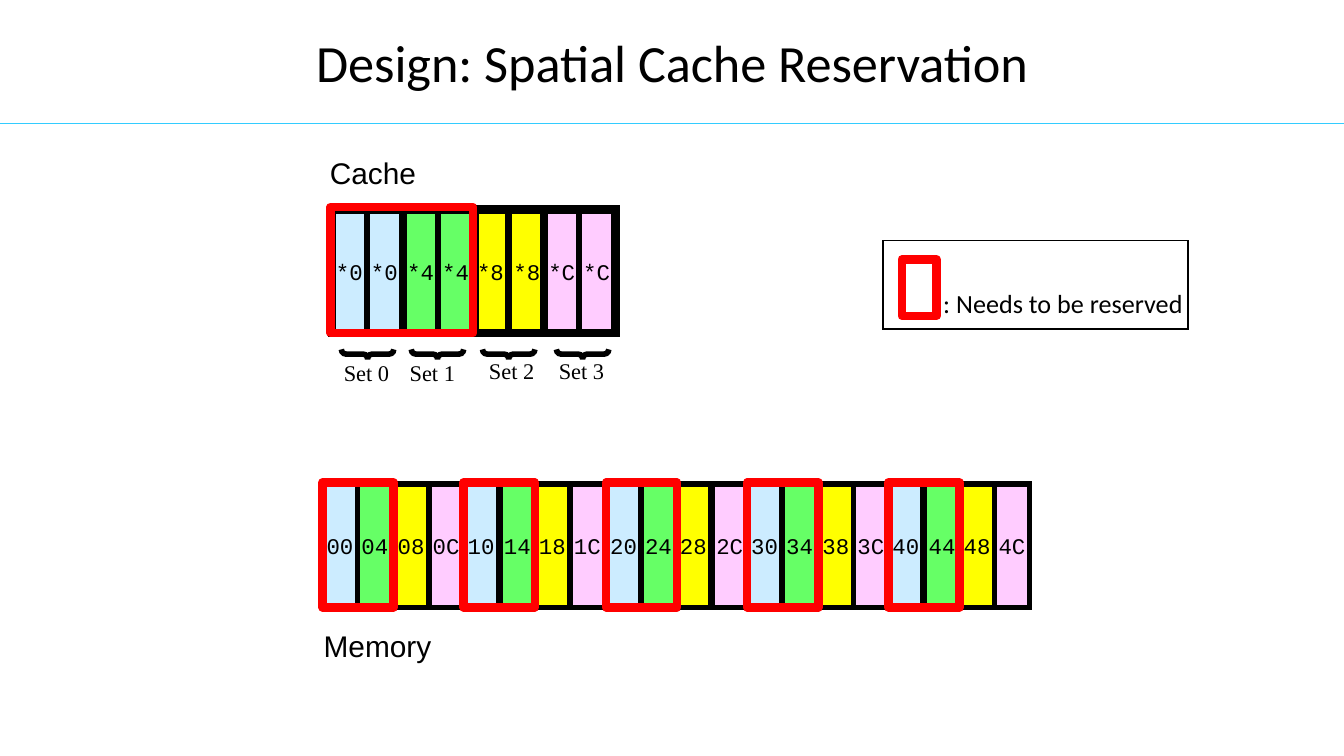
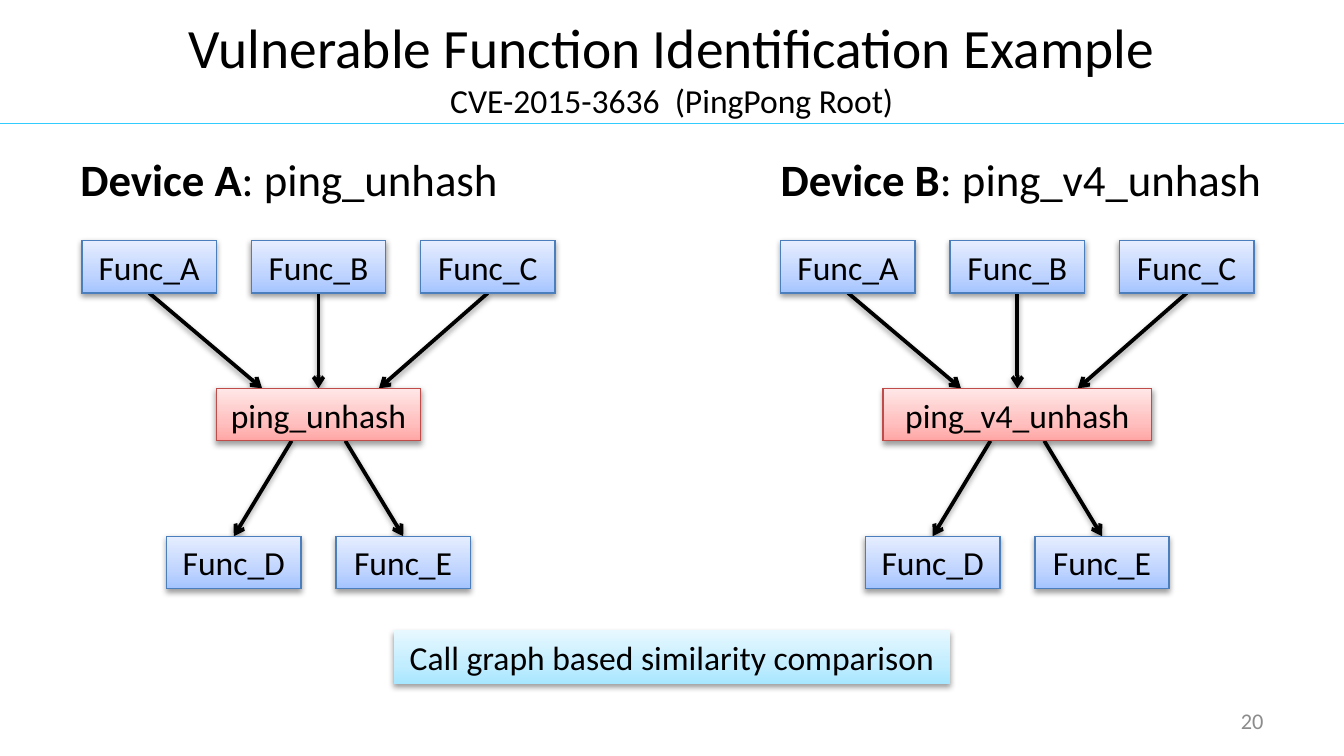
import copy

import lxml.etree
import pptx
import pptx.dml.color
import pptx.enum.shapes
import pptx.enum.text
import pptx.oxml.ns
import pptx.util

PX = 9144  # EMU in one px, 100 px to the inch
WIDE = 1000
qn = pptx.oxml.ns.qn
Kind = pptx.enum.shapes.MSO_SHAPE
Align = pptx.enum.text.PP_ALIGN
Anchor = pptx.enum.text.MSO_ANCHOR


class Theme:
    black, red, grey, rule = "000000", "FF0000", "8C8C8C", "33CCFF"
    sets = ["CCECFF", "66FF66", "FFFF00", "FFCCFF"]
    blue = ["A4C4FF", "BFD4FF", "E6EEFF"]
    rose = ["FFA6A5", "FFC0BF", "FFE7E7"]
    aqua = ["A7E6FF", "C1EDFF", "E7F8FF"]
    edge, rim = "4B7EBC", "BF4C48"
    sans, label, code, serif = "Calibri", "Arial", "Courier New", "Times New Roman"
    title, long, head, node, tag, note, small = 28, 29.7, 24, 18, 16, 14, 12
    thin, hair, arrow, line, frame = 0.75, 1, 2, 3, 4.5


def rgb(code):
    return pptx.dml.color.RGBColor.from_string(code)


def px(*nums):
    return [pptx.util.Emu(num * PX) for num in nums]


class Deck:
    def __init__(self, theme):
        self.theme = theme
        self.show = pptx.Presentation()
        self.show.slide_width = px(WIDE)[0]
        self.show.slide_height = self.show.slide_width * 9 // 16
        self.slide = None

    def page(self, title, top, high, size, sub=None):
        """Start a slide with its title, optional second line and rule."""
        self.slide = self.show.slides.add_slide(self.show.slide_layouts[5])
        self.line((0, 92), (WIDE, 92), self.theme.rule, self.theme.thin)
        box = self.slide.shapes.title
        box.left, box.top, box.width, box.height = px(50, top, 900, high)
        box.text_frame.auto_size = pptx.enum.text.MSO_AUTO_SIZE.NONE
        para = self.label(box, title, size, align=Align.CENTER)
        if sub:
            para.add_line_break()
            run = para.add_run()
            run.text = sub
            run.font.size = pptx.util.Pt(self.theme.node)

    def style(self, para, size, font=None, color=None):
        para.font.size = pptx.util.Pt(size)
        para.font.name = font or self.theme.sans
        para.font.color.rgb = rgb(color or self.theme.black)

    def label(self, shape, text, size, font=None, color=None,
              align=Align.LEFT, anchor=Anchor.MIDDLE, wrap=True):
        """Fill the first paragraph of a shape and return it."""
        frame = shape.text_frame
        frame.word_wrap = wrap
        frame.vertical_anchor = anchor
        para = frame.paragraphs[0]
        para.alignment = align
        self.style(para, size, font, color)
        if text:
            para.add_run().text = text
        return para

    def text(self, spot, text, size, font=None, **more):
        box = self.slide.shapes.add_textbox(*px(*spot))
        self.label(box, text, size, font, **more)

    def shape(self, spot, kind=Kind.RECTANGLE, fill=None, line=None, width=1, sharp=True):
        """Add a shape; a list of colours as fill makes a gradient, bottom to top."""
        shape = self.slide.shapes.add_shape(kind, *px(*spot))
        shape.shadow.inherit = False
        if isinstance(fill, list):
            self.blend(shape, fill)
        elif fill:
            shape.fill.solid()
            shape.fill.fore_color.rgb = rgb(fill)
        else:
            shape.fill.background()
        if line:
            shape.line.color.rgb = rgb(line)
            shape.line.width = pptx.util.Pt(width)
            join = "a:miter" if sharp else "a:round"
            lxml.etree.SubElement(shape._element.spPr.find(qn("a:ln")), qn(join))
        else:
            shape.line.fill.background()
        return shape

    def blend(self, shape, colors):
        shape.fill.gradient()
        shape.fill.gradient_angle = 90
        stops = shape._element.spPr.find(".//" + qn("a:gsLst"))
        stops.insert(1, copy.deepcopy(stops[0]))
        for stop, place, color in zip(shape.fill.gradient_stops, (0, 0.35, 1), colors):
            stop.position = place
            stop.color.rgb = rgb(color)

    def shade(self, item):
        """Give a shape or connector the soft shadow below it."""
        props = item._element.spPr
        effect = props.find(qn("a:effectLst"))
        outer = lxml.etree.SubElement(effect, qn("a:outerShdw"), blurRad="40000",
                                      dist="20000", dir="5400000", rotWithShape="0")
        color = lxml.etree.SubElement(outer, qn("a:srgbClr"), val=self.theme.black)
        lxml.etree.SubElement(color, qn("a:alpha"), val="38000")

    def cell(self, spot, text, fill):
        box = self.shape(spot, fill=fill, line=self.theme.black, width=self.theme.line)
        self.tight(box)
        self.label(box, text, self.theme.small, self.theme.code,
                   align=Align.CENTER, wrap=False)

    def tight(self, box):
        box.text_frame.margin_left = box.text_frame.margin_right = 0

    def frame(self, spot, color):
        self.shape(spot, line=color, width=self.theme.frame,
                   sharp=color == self.theme.black)

    def brace(self, spot):
        brace = self.shape(spot, Kind.RIGHT_BRACE, line=self.theme.black,
                           width=self.theme.line)
        brace.rotation = 90
        brace.adjustments[0] = brace.adjustments[1] = 0.5

    def node(self, spot, text, fill, line=None):
        box = self.shape(spot, fill=fill, line=line, width=self.theme.thin)
        self.shade(box)
        self.tight(box)
        self.label(box, text, self.theme.node, align=Align.CENTER)
        return box

    def line(self, start, end, color, width):
        line = self.slide.shapes.add_connector(
            pptx.enum.shapes.MSO_CONNECTOR.STRAIGHT, *px(*start, *end))
        line.line.color.rgb = rgb(color)
        line.line.width = pptx.util.Pt(width)
        lxml.etree.SubElement(line._element.spPr, qn("a:effectLst"))
        return line

    def arrow(self, start, end, source=None, target=None):
        """Draw an arrow behind the nodes, from a bottom side to a top side."""
        line = self.line(start, end, self.theme.black, self.theme.arrow)
        self.shade(line)
        lxml.etree.SubElement(line._element.spPr.find(qn("a:ln")), qn("a:tailEnd"),
                              type="arrow")
        if source is not None:
            line.begin_connect(source, 2)
        if target is not None:
            line.end_connect(target, 0)
        self.slide.shapes._spTree.insert(2, line._element)

    def heads(self, spot, pairs, stop):
        """Set bold name and plain value pairs, parted by one tab stop."""
        box = self.slide.shapes.add_textbox(*px(*spot))
        para = box.text_frame.paragraphs[0]
        tabs = lxml.etree.SubElement(para._p.get_or_add_pPr(), qn("a:tabLst"))
        lxml.etree.SubElement(tabs, qn("a:tab"), pos=str(stop * PX), algn="l")
        self.label(box, "", self.theme.head, anchor=Anchor.TOP)
        for num, (name, value) in enumerate(pairs):
            if num:
                para.add_run().text = "\t"
            run = para.add_run()
            run.text = name
            run.font.bold = True
            para.add_run().text = ": " + value


def step(num):
    """Left offset of a memory cell; three cells take 79 px."""
    return round(num * 79 / 3)


def cache(deck):
    theme = deck.theme
    deck.page("Design: Spatial Cache Reservation", 14, 63, theme.title)
    for num in range(20):
        deck.cell((240 + step(num), 360, 26, 92), f"{num * 4:02X}", theme.sets[num % 4])
    for num in range(8):
        group = num // 2
        deck.cell((247 + step(num), 156, 26, 92), f"*{group * 4:X}", theme.sets[group])
    deck.text((235, 110, 85, 37), "Cache", theme.tag, theme.label,
              align=Align.CENTER, wrap=False)
    deck.text((231, 462, 101, 37), "Memory", theme.tag, theme.label, wrap=False)
    for num, (brace, label, top) in enumerate(
            [(270, 246, 262), (322, 295, 262), (375, 354, 261), (430, 406, 261)]):
        deck.brace((brace, 244, 7, 39))
        deck.text((label, top, 54, 30), f"Set {num}", theme.small, theme.serif, wrap=False)
        deck.frame((247 + step(num * 2), 156, 53, 92), theme.black)
    for num in range(0, 20, 4):
        deck.frame((240 + step(num), 359, 53, 93), theme.red)
    deck.frame((246, 154, 106, 94), theme.red)
    deck.frame((671, 193, 26, 42), theme.red)
    deck.text((692, 209, 200, 34), ": Needs to be reserved", theme.note,
              anchor=Anchor.TOP, wrap=False)
    deck.shape((657, 179, 227, 66), line=theme.black, width=theme.hair)


def graph(deck, left, name, wide):
    """Draw callers, the function and its callees, one below the other."""
    theme = deck.theme
    mid = left + 176

    def row(start, top, names):
        return [deck.node((start + num * 126, top, 100, 39), "Func_" + mark,
                          theme.blue, theme.edge) for num, mark in enumerate(names)]

    tops = row(left, 179, "ABC")
    lows = row(left + 63, 399, "DE")
    hub = deck.node((mid - wide // 2, 289, wide, 39), name, theme.rose, theme.rim)
    for num, (box, shift) in enumerate(zip(tops, (-42, 0, 45))):
        deck.arrow((left + 50 + num * 126, 218), (mid + shift, 289), box,
                   None if shift else hub)
    for num, (box, shift) in enumerate(zip(lows, (-20, 20))):
        deck.arrow((mid + shift, 328), (left + 113 + num * 126, 399), target=box)


def calls(deck):
    theme = deck.theme
    deck.page("Vulnerable Function Identification Example", 6, 87, theme.long,
              "CVE-2015-3636  (PingPong Root)")
    names = ["ping_unhash", "ping_v4_unhash"]
    deck.heads((50, 108, 900, 55), zip(["Device A", "Device B"], names), 521)
    for num, (name, wide) in enumerate(zip(names, (152, 200))):
        graph(deck, 61 + num * 520, name, wide)
    deck.text((717, 521, 233, 30), "20", theme.small, color=theme.grey, align=Align.RIGHT)
    deck.node((293, 469, 414, 40), "Call graph based similarity comparison", theme.aqua)


def main():
    deck = Deck(Theme())
    cache(deck)
    calls(deck)
    deck.show.save("out.pptx")


if __name__ == "__main__":
    main()
